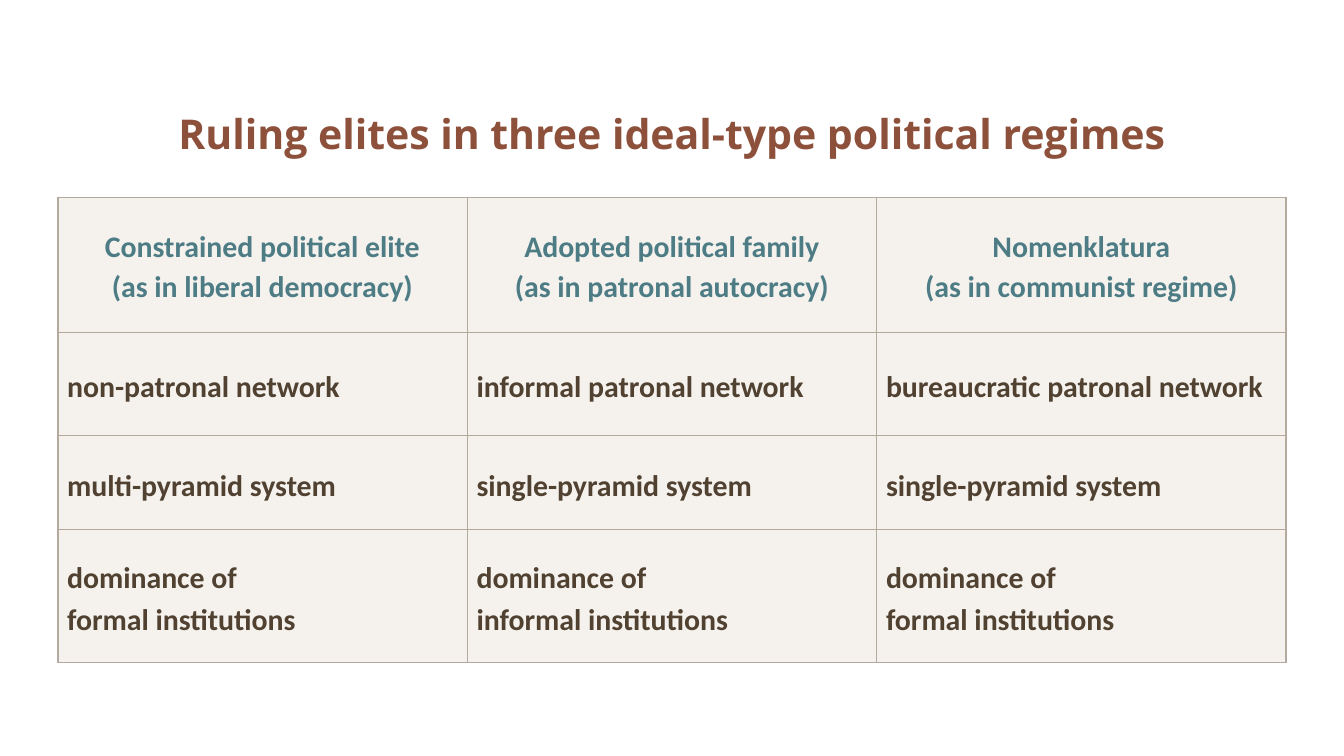
from lxml.etree import SubElement
from pptx import Presentation
from pptx.dml.color import RGBColor
from pptx.enum.text import MSO_ANCHOR, MSO_AUTO_SIZE, PP_ALIGN
from pptx.oxml import parse_xml
from pptx.oxml.ns import nsdecls, qn
from pptx.util import Inches, Pt

TITLE = "Ruling elites in three ideal-type political regimes"
ROWS = [
    ["Constrained political elite\n(as in liberal democracy)",
     "Adopted political family\n(as in patronal autocracy)",
     "Nomenklatura\n(as in communist regime)"],
    ["non-patronal network", "informal patronal network", "bureaucratic patronal network"],
    ["multi-pyramid system", "single-pyramid system", "single-pyramid system"],
    ["dominance of\nformal institutions",
     "dominance of\ninformal institutions",
     "dominance of\nformal institutions"],
]
ROW_HEIGHTS = [1, 0.77, 0.7, 0.99]
TABLE_WIDTH = 9.14
BORDER = "B3A99D"
CELL_FILL = "EFEAE4"
CELL_OPACITY = 60


def color(value):
    return RGBColor.from_string(value)


def write_text(text_frame, text, *, size, fill, font="Calibri",
               align=PP_ALIGN.LEFT, line_spacing=1.15):
    text_frame.text = text
    text_frame.word_wrap = True
    for paragraph in text_frame.paragraphs:
        paragraph.alignment = align
        paragraph.line_spacing = line_spacing
        for run in paragraph.runs:
            run.font.name = font
            run.font.size = Pt(size)
            run.font.bold = True
            run.font.color.rgb = color(fill)


def fill_cell(cell):
    cell.fill.solid()
    cell.fill.fore_color.rgb = color(CELL_FILL)
    properties = cell._tc.get_or_add_tcPr()
    fill_color = properties.find(".//" + qn("a:srgbClr"))
    SubElement(fill_color, qn("a:alpha"), val=str(CELL_OPACITY * 1000))


def border_cell(cell, widths):
    properties = cell._tc.get_or_add_tcPr()
    for index, (side, width) in enumerate(widths.items()):
        properties.insert(index, parse_xml(
            f'<a:ln{side} {nsdecls("a")} w="{Pt(width)}"><a:solidFill>'
            f'<a:srgbClr val="{BORDER}"/></a:solidFill>'
            f'<a:prstDash val="solid"/></a:ln{side}>'))


def add_title(slide):
    title = slide.shapes.title
    title.left, title.top = Inches(0.12), Inches(0.46)
    title.width, title.height = Inches(9.76), Inches(1)
    write_text(title.text_frame, TITLE, size=22, fill="8D503B",
               font="Open Sans", align=PP_ALIGN.CENTER)
    title.text_frame.auto_size = MSO_AUTO_SIZE.NONE
    title.text_frame.vertical_anchor = MSO_ANCHOR.MIDDLE


def add_regime_table(slide):
    row_count, column_count = len(ROWS), len(ROWS[0])
    table = slide.shapes.add_table(
        row_count, column_count, Inches(0.43), Inches(1.47),
        Inches(TABLE_WIDTH), Inches(sum(ROW_HEIGHTS))).table
    table.first_row = False
    table.horz_banding = False
    for column in table.columns:
        column.width = Inches(TABLE_WIDTH / column_count)
    for row_index, (row, height) in enumerate(zip(table.rows, ROW_HEIGHTS)):
        row.height = Inches(height)
        if row_index == 0:
            style = {"fill": "4D7C85", "align": PP_ALIGN.CENTER, "line_spacing": 1.1}
        else:
            style = {"fill": "504131"}
        for column_index, cell in enumerate(row.cells):
            write_text(cell.text_frame, ROWS[row_index][column_index], size=16, **style)
            cell.vertical_anchor = MSO_ANCHOR.MIDDLE
            cell.margin_left = cell.margin_right = Inches(0.07)
            cell.margin_top, cell.margin_bottom = Inches(0.01), Inches(0)
            fill_cell(cell)
            border_cell(cell, {
                "L": 1 if column_index == 0 else 0.5,
                "R": 1 if column_index == column_count - 1 else 0.5,
                "T": 1 if row_index == 0 else 0.5,
                "B": 1 if row_index == row_count - 1 else 0.5,
            })


def main():
    presentation = Presentation()
    presentation.slide_width = Inches(10)
    presentation.slide_height = Inches(10 * 9 / 16)
    slide = presentation.slides.add_slide(presentation.slide_layouts[5])
    add_title(slide)
    add_regime_table(slide)
    presentation.save("out.pptx")


if __name__ == "__main__":
    main()
